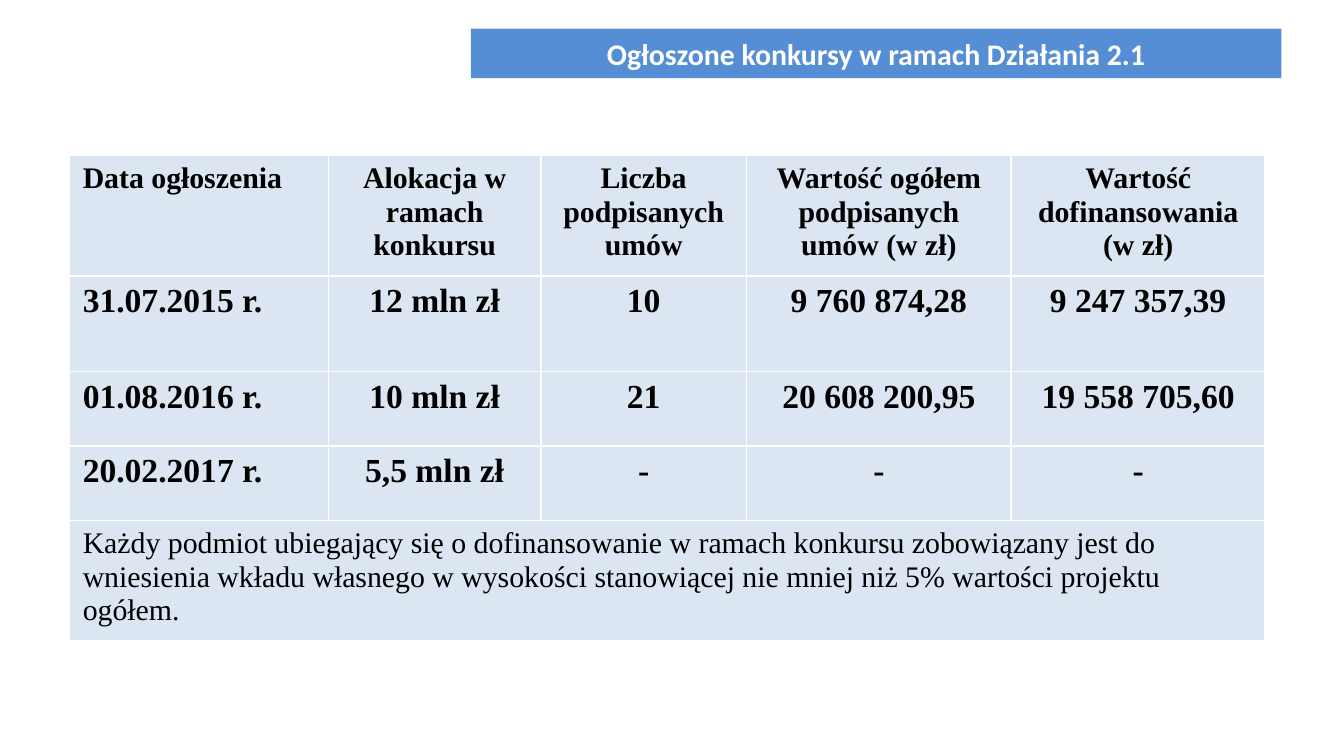
from lxml import etree
from pptx import Presentation
from pptx import util as u
from pptx.dml.color import RGBColor
from pptx.enum import shapes, text
from pptx.oxml.ns import qn

COLOURS = {"banner": "558ED5", "cell": "DCE6F2", "ink": "000000", "white": "FFFFFF"}
HEADINGS = [
    "Data ogłoszenia",
    "Alokacja w ramach konkursu",
    "Liczba podpisanych umów",
    "Wartość ogółem podpisanych umów (w zł)",
    "Wartość dofinansowania\n(w zł)",
]
CONTESTS = [
    ["31.07.2015 r.", "12 mln zł", "10", "9 760 874,28", "9 247 357,39"],
    ["01.08.2016 r.", "10 mln zł", "21", "20 608 200,95", "19 558 705,60"],
    ["20.02.2017 r.", "5,5 mln zł", "-", "-", "-"],
]
REQUIREMENT = (
    "Każdy podmiot ubiegający się o dofinansowanie w ramach konkursu zobowiązany jest do "
    "wniesienia wkładu własnego w wysokości stanowiącej nie mniej niż 5% wartości projektu ogółem."
)
COLUMN_WIDTHS = [4.9, 4.01, 3.89, 5, 4.8]
ROW_HEIGHTS = [2.28, 1.8, 1.41, 1.41, 2.28]


class SlideBuilder:
    """Hold the style and the current slide, and draw each kind of element."""

    def __init__(self, slide):
        self.slide = slide

    def colour(self, name):
        return RGBColor.from_string(COLOURS[name])

    def set_wording(self, frame, wording, font, size, ink, bold=True, centred=True):
        frame.text = wording
        for paragraph in frame.paragraphs:
            paragraph.alignment = text.PP_ALIGN.CENTER if centred else text.PP_ALIGN.LEFT
            for run in paragraph.runs:
                run.font.name = font
                run.font.size = u.Pt(size)
                run.font.bold = bold
                run.font.color.rgb = self.colour(ink)

    def banner(self, wording, left, top, width, height):
        banner = self.slide.shapes.add_shape(
            shapes.MSO_SHAPE.RECTANGLE, u.Cm(left), u.Cm(top), u.Cm(width), u.Cm(height))
        banner.shadow.inherit = False
        banner.fill.solid()
        banner.fill.fore_color.rgb = self.colour("banner")
        banner.line.fill.background()
        banner.text_frame.word_wrap = True
        self.set_wording(banner.text_frame, wording, "Calibri", 16, "white")

    def style_cell(self, cell):
        properties = cell._tc.get_or_add_tcPr()
        for side in ("a:lnL", "a:lnR", "a:lnT", "a:lnB"):
            border = etree.SubElement(properties, qn(side), w=str(u.Pt(1)))
            fill = etree.SubElement(border, qn("a:solidFill"))
            etree.SubElement(fill, qn("a:srgbClr"), val=COLOURS["white"])
        cell.fill.solid()
        cell.fill.fore_color.rgb = self.colour("cell")

    def table(self, rows, left, top, widths, heights):
        table = self.slide.shapes.add_table(
            len(heights), len(widths), u.Cm(left), u.Cm(top),
            u.Cm(sum(widths)), u.Cm(sum(heights))).table
        table.first_row = table.horz_banding = False
        for column, width in zip(table.columns, widths):
            column.width = u.Cm(width)
        for row, height in zip(table.rows, heights):
            row.height = u.Cm(height)
        for cell in table.iter_cells():
            self.style_cell(cell)
        last = len(rows) - 1
        table.cell(last, 0).merge(table.cell(last, len(widths) - 1))
        for r, row in enumerate(rows):
            for c, wording in enumerate(row):
                self.set_wording(table.cell(r, c).text_frame, wording, "Times New Roman",
                                 16 if r in (0, last) else 18, "ink",
                                 bold=r != last, centred=c > 0)


def main():
    presentation = Presentation()
    presentation.slide_width = u.Cm(25.4)
    presentation.slide_height = u.Cm(14.29)
    builder = SlideBuilder(presentation.slides.add_slide(presentation.slide_layouts[6]))
    builder.banner("Ogłoszone konkursy w ramach Działania 2.1", 8.9, 0.54, 15.32, 0.94)
    builder.table([HEADINGS, *CONTESTS, [REQUIREMENT]], 1.31, 2.94, COLUMN_WIDTHS, ROW_HEIGHTS)
    presentation.save("out.pptx")


if __name__ == "__main__":
    main()
